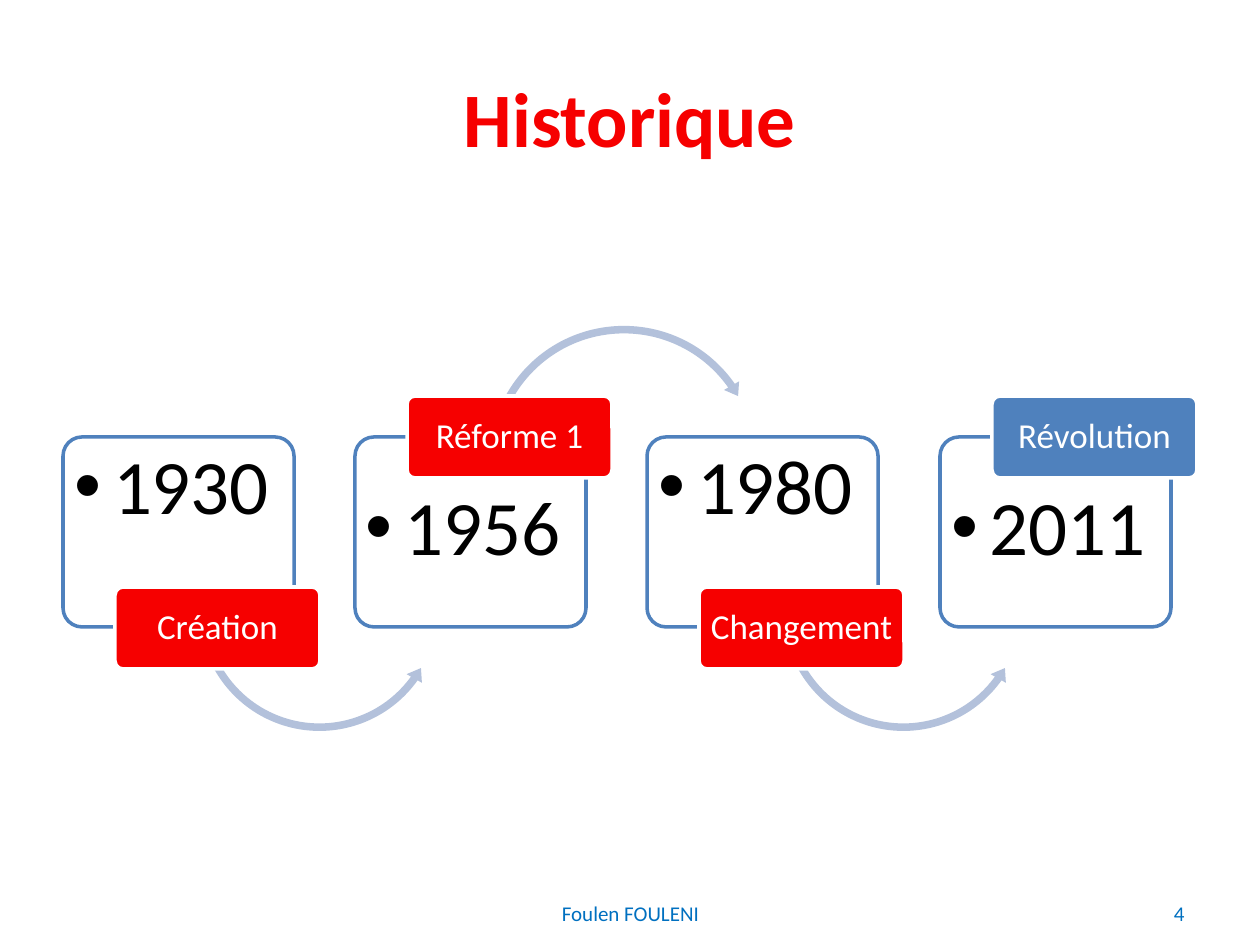
from pptx import Presentation
from pptx.dml.color import RGBColor
from pptx.enum.shapes import MSO_SHAPE
from pptx.enum.text import MSO_ANCHOR, PP_ALIGN
from pptx.oxml.ns import qn
from pptx.util import Emu, Pt
from lxml import etree

ROUND_RECT = MSO_SHAPE.ROUNDED_RECTANGLE
ARROW_DOWN = MSO_SHAPE.CIRCULAR_ARROW
ARROW_UP = MSO_SHAPE.LEFT_CIRCULAR_ARROW
MIDDLE, TOP = MSO_ANCHOR.MIDDLE, MSO_ANCHOR.TOP
LEFT, CENTER, RIGHT = PP_ALIGN.LEFT, PP_ALIGN.CENTER, PP_ALIGN.RIGHT

PX_PER_INCH = 126
FONT = "Calibri"
COLORS = {
    "red": "F60000",
    "blue": "4F81BD",
    "arrow": "B3C1DB",
    "footer": "0070C0",
    "black": "000000",
    "white": "FFFFFF",
}
STEPS = [
    ("1930", "Création", "red"),
    ("1956", "Réforme 1", "red"),
    ("1980", "Changement", "red"),
    ("2011", "Révolution", "blue"),
]
UP_ADJ = (0.03, 3.637, 21.392, 90.245, 0.035)
DOWN_ADJ = (0.027, 3.23, 195.015, 125.755, 0.031)


def px(n):
    return Emu(round(n * 914400 / PX_PER_INCH))


def color(name):
    return RGBColor.from_string(COLORS[name])


def set_text(sp, text, size, name, align=CENTER, anchor=MIDDLE, bold=False):
    tf = sp.text_frame
    tf.word_wrap = True
    tf.vertical_anchor = anchor
    p = tf.paragraphs[0]
    p.alignment = align
    r = p.add_run()
    r.text = text
    r.font.name = FONT
    r.font.size = Pt(size)
    r.font.bold = bold
    r.font.color.rgb = color(name)
    return p


def set_insets(sp, x, y):
    tf = sp.text_frame
    tf.margin_left = tf.margin_right = px(x)
    tf.margin_top = tf.margin_bottom = px(y)


def add_shape(shapes, kind, box, fill, line=None, adjustments=(0.1,)):
    sp = shapes.add_shape(kind, *map(px, box))
    sp.shadow.inherit = False
    for i, value in enumerate(adjustments):
        sp.adjustments[i] = value
    sp.fill.solid()
    sp.fill.fore_color.rgb = color(fill)
    if line:
        sp.line.color.rgb = color(line)
        sp.line.width = Pt(2)
    else:
        sp.line.fill.background()
    return sp


def add_card(shapes, x):
    sp = add_shape(shapes, ROUND_RECT, (x, 437, 231, 190), "white", "blue")
    clr = sp.fill._xPr.find(qn("a:solidFill"))[0]
    etree.SubElement(clr, qn("a:alpha"), val="90000")


def add_year(shapes, x, y, year):
    sp = shapes.add_textbox(*map(px, (x, y, 231, 150)))
    set_insets(sp, 11, 11)
    p = set_text(sp, year, 44, "black", LEFT, TOP)
    p.line_spacing = 0.9
    pPr = p._p.get_or_add_pPr()
    pPr.set("marL", str(px(39)))
    pPr.set("indent", str(px(-39)))
    etree.SubElement(pPr, qn("a:buFont"), typeface="Arial")
    etree.SubElement(pPr, qn("a:buChar"), char="•")


def add_tag(shapes, x, y, label, fill):
    sp = add_shape(shapes, ROUND_RECT, (x, y, 205, 82), fill, "white")
    set_insets(sp, 5, 4)
    set_text(sp, label, 20, "white").line_spacing = 0.9


def add_arrow(shapes, x, points_up):
    if points_up:
        add_shape(shapes, ARROW_UP, (x + 131, 485, 251, 251), "arrow", adjustments=UP_ADJ)
    else:
        add_shape(shapes, ARROW_DOWN, (x + 129, 321, 280, 280), "arrow", adjustments=DOWN_ADJ)


def add_timeline(slide):
    shapes = slide.shapes.add_group_shape().shapes
    for i, (year, label, fill) in enumerate(STEPS):
        x = 63 + 877 * i // 3
        tag_below = i % 2 == 0
        add_card(shapes, x)
        add_year(shapes, x, 437 if tag_below else 478, year)
        if i < len(STEPS) - 1:
            add_arrow(shapes, x, tag_below)
        add_tag(shapes, x + 52, 587 if tag_below else 396, label, fill)


def add_title(slide, text):
    sp = slide.shapes.title
    sp.left, sp.top, sp.width, sp.height = map(px, (63, 38, 1134, 158))
    set_text(sp, text, 44, "red", bold=True)


def add_footer(slide, x, width, text, align):
    sp = slide.shapes.add_textbox(*map(px, (x, 888, width, 50)))
    set_text(sp, text, 12, "footer", align)


def main():
    prs = Presentation()
    prs.slide_width, prs.slide_height = px(1260), px(945)
    slide = prs.slides.add_slide(prs.slide_layouts[5])
    add_title(slide, "Historique")
    add_timeline(slide)
    add_footer(slide, 431, 399, "Foulen FOULENI", CENTER)
    add_footer(slide, 903, 294, "4", RIGHT)
    prs.save("out.pptx")


if __name__ == "__main__":
    main()
